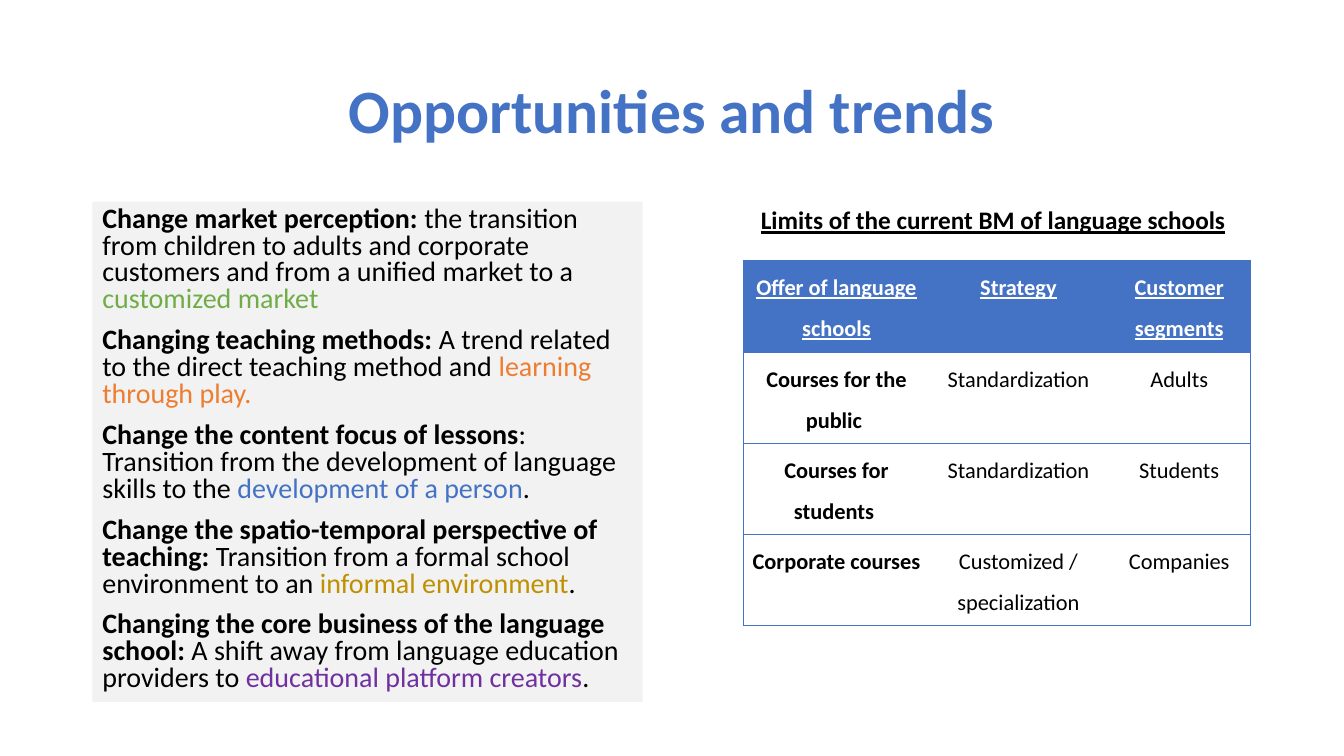
from dataclasses import dataclass

from lxml import etree
from pptx import Presentation
from pptx.dml.color import RGBColor
from pptx.enum.shapes import MSO_SHAPE
from pptx.enum.text import MSO_ANCHOR, PP_ALIGN
from pptx.oxml.ns import qn
from pptx.util import Inches, Pt

RECT = MSO_SHAPE.RECTANGLE
TOP, MIDDLE = MSO_ANCHOR.TOP, MSO_ANCHOR.MIDDLE
LEFT, CENTER = PP_ALIGN.LEFT, PP_ALIGN.CENTER
WIDTH, HEIGHT = Inches(13.33), Inches(7.5)


@dataclass(frozen=True)
class Theme:
    font: str = "Calibri"
    black: str = "000000"
    white: str = "FFFFFF"
    panel: str = "F2F2F2"
    blue: str = "4472C4"
    green: str = "70AD47"
    orange: str = "ED7D31"
    gold: str = "BF9000"
    purple: str = "7030A0"
    title_size: int = 44
    trend_size: int = 20
    caption_size: int = 18
    table_size: int = 16
    border_width: float = 0.5


THEME = Theme()

# Bold lead, plain text, highlighted words, highlight colour, closing mark
TRENDS = [
    ("Change market perception: ",
     "the transition from children to adults and corporate customers "
     "and from a unified market to a ",
     "customized market", THEME.green, ""),
    ("Changing teaching methods: ",
     "A trend related to the direct teaching method and ",
     "learning through play.", THEME.orange, ""),
    ("Change the content focus of lessons",
     ": Transition from the development of language skills to the ",
     "development of a person", THEME.blue, "."),
    ("Change the spatio-temporal perspective of teaching: ",
     "Transition from a formal school environment to an ",
     "informal environment", THEME.gold, "."),
    ("Changing the core business of the language school:",
     " A shift away from language education providers to ",
     "educational platform creators", THEME.purple, "."),
]

LIMITS = [
    ("Offer of language schools", "Strategy", "Customer segments"),
    ("Courses for the public ", "Standardization", "Adults"),
    ("Courses for students ", "Standardization", "Students"),
    ("Corporate courses ", "Customized / specialization", "Companies"),
]
LIMIT_COLUMNS = (13.8, 13.28, 10.65)
LIMIT_ROW = 12.07


def across(percent):
    return int(WIDTH * percent / 100)


def down(percent):
    return int(HEIGHT * percent / 100)


def place(left, top, width, height):
    """Turn percentages of the slide into a position and size."""
    return across(left), down(top), across(width), down(height)


def set_format(target, values):
    for name, value in values.items():
        setattr(target, name, value)


def add_run(p, text, size, color=THEME.black, **font):
    r = p.add_run()
    r.text = text
    set_format(r.font, {"name": THEME.font, "size": Pt(size), **font})
    r.font.color.rgb = RGBColor.from_string(color)


def add_text_box(s, area, anchor=TOP):
    tf = s.shapes.add_textbox(*area).text_frame
    set_format(tf, {"word_wrap": True, "vertical_anchor": anchor})
    return tf


def add_title(s, text):
    p = add_text_box(s, place(6.88, 5.33, 86.25, 19.33), MIDDLE).paragraphs[0]
    set_format(p, {"alignment": CENTER, "line_spacing": 0.9})
    add_run(p, text, THEME.title_size, THEME.blue, bold=True)


def add_trends(s, trends):
    sp = s.shapes.add_shape(RECT, *place(6.88, 26.67, 40.94, 66.17))
    sp.shadow.inherit = False
    sp.fill.solid()
    sp.fill.fore_color.rgb = RGBColor.from_string(THEME.panel)
    sp.line.fill.background()
    tf = sp.text_frame
    set_format(tf, {"word_wrap": True, "vertical_anchor": TOP})
    for i, (lead, text, highlight, color, closing) in enumerate(trends):
        p = tf.add_paragraph() if i else tf.paragraphs[0]
        set_format(p, {"alignment": LEFT, "line_spacing": 0.8,
                       "space_before": Pt(10)})
        add_run(p, lead, THEME.trend_size, bold=True)
        add_run(p, text, THEME.trend_size)
        add_run(p, highlight, THEME.trend_size, color)
        if closing:
            add_run(p, closing, THEME.trend_size)


def add_caption(s, text):
    p = add_text_box(s, place(55.87, 26.4, 36.68, 5.33)).paragraphs[0]
    add_run(p, text, THEME.caption_size, bold=True, underline=True)


def set_borders(cell, visible):
    """Draw the named edges (L, R, T, B) and clear the others."""
    tc_pr = cell._tc.get_or_add_tcPr()
    for i, edge in enumerate("LRTB"):
        line = etree.Element(qn(f"a:ln{edge}"), w=str(Pt(THEME.border_width)))
        if edge in visible:
            fill = etree.SubElement(line, qn("a:solidFill"))
            etree.SubElement(fill, qn("a:srgbClr"), val=THEME.blue)
        else:
            etree.SubElement(line, qn("a:noFill"))
        tc_pr.insert(i, line)


def fill_cell(cell, text, color, space_before, **font):
    side = Inches(0.07)
    set_format(cell, {"margin_left": side, "margin_right": side,
                      "margin_top": 0, "margin_bottom": 0})
    p = cell.text_frame.paragraphs[0]
    set_format(p, {"alignment": CENTER, "line_spacing": 1.5,
                   "space_before": Pt(space_before), "space_after": Pt(6)})
    add_run(p, text, THEME.table_size, color, **font)


def add_limits_table(s, rows):
    area = place(55.34, 34.5, sum(LIMIT_COLUMNS), LIMIT_ROW * len(rows))
    table = s.shapes.add_table(len(rows), len(LIMIT_COLUMNS), *area).table
    set_format(table, {"first_row": False, "horz_banding": False})
    for column, width in zip(table.columns, LIMIT_COLUMNS):
        column.width = across(width)
    last_row, last_column = len(rows) - 1, len(LIMIT_COLUMNS) - 1
    for i, row in enumerate(rows):
        table.rows[i].height = down(LIMIT_ROW)
        header = i == 0
        for j, text in enumerate(row):
            cell = table.cell(i, j)
            fill_cell(cell, text, THEME.white if header else THEME.black,
                      12 if i == last_row else 0,
                      bold=header or j == 0, underline=header)
            if header:
                cell.fill.solid()
                cell.fill.fore_color.rgb = RGBColor.from_string(THEME.blue)
            else:
                cell.fill.background()
            sides = {0: "L", last_column: "R"}.get(j, "")
            set_borders(cell, "TB" + sides)


def main():
    prs = Presentation()
    set_format(prs, {"slide_width": WIDTH, "slide_height": HEIGHT})
    s = prs.slides.add_slide(prs.slide_layouts[6])
    add_title(s, "Opportunities and trends")
    add_trends(s, TRENDS)
    add_limits_table(s, LIMITS)
    add_caption(s, "Limits of the current BM of language schools")
    prs.save("out.pptx")


if __name__ == "__main__":
    main()
